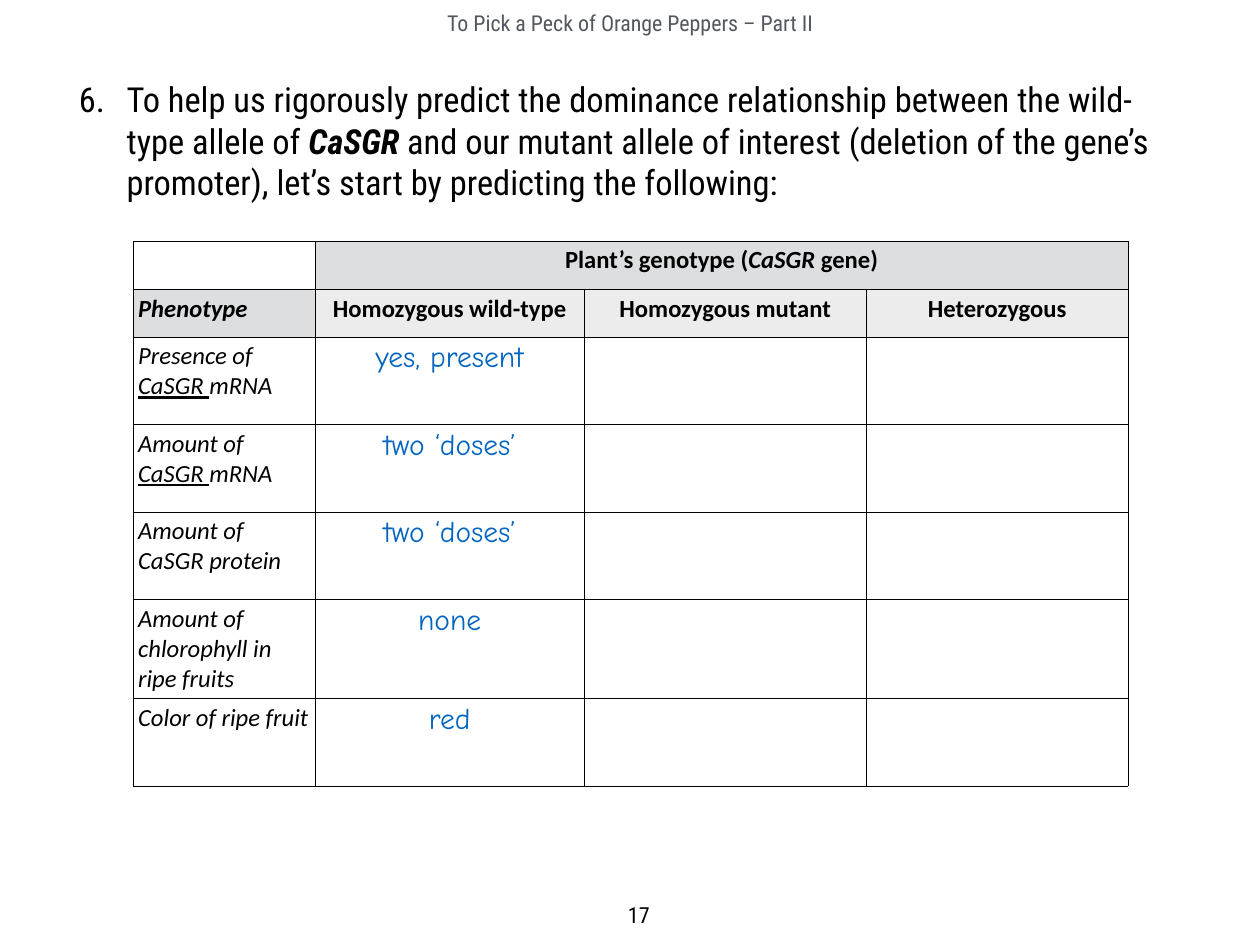
import pptx
import pptx.dml.color
import pptx.enum.text
import pptx.oxml
import pptx.oxml.ns
import pptx.util
from pptx.util import Cm

ALIGN = pptx.enum.text.PP_ALIGN
ANCHOR = pptx.enum.text.MSO_ANCHOR
HEADING_FONT = "Roboto Condensed"
BLACK, WHITE, ANSWER_BLUE = "000000", "FFFFFF", "0365C0"
TITLE_GREY, DARK_FILL, LIGHT_FILL = "53585F", "DCDEE0", "ECECEC"

COLUMN_WIDTHS = [5.23, 7.7, 8.1, 7.49]
ROW_HEIGHTS = [1.4, 1.35, 2.51, 2.51, 2.51, 2.84, 2.51]
QUESTION = [
    ("To help us rigorously predict the dominance relationship between the wild-type allele of ", ""),
    ("CaSGR", "bi"),
    (" and our mutant allele of interest (deletion of the gene’s promoter), "
     "let’s start by predicting the following:", ""),
]
GENOTYPE_TITLE = [("Plant’s genotype (", "b"), ("CaSGR ", "bi"), ("gene)", "b")]
GENOTYPES = ["Homozygous wild-type", "Homozygous mutant", "Heterozygous"]
MRNA = [("CaSGR ", "iu"), ("mRNA", "i")]
PHENOTYPES = [
    ([("Presence of ", "i")] + MRNA, "yes, present"),
    ([("Amount of ", "i")] + MRNA, "two ‘doses’"),
    ([("Amount of CaSGR protein", "i")], "two ‘doses’"),
    ([("Amount of chlorophyll in ripe fruits", "i")], "none"),
    ([("Color of ripe fruit", "i")], "red"),
]


def color(hex_string):
    """Turn a hex string into a colour."""
    return pptx.dml.color.RGBColor.from_string(hex_string)


def add_runs(para, runs, size, font, hex_string):
    """Add (text, style) runs, where style holds any of the letters b, i and u."""
    for text, style in runs:
        span = para.add_run()
        span.text = text
        span.font.size = pptx.util.Pt(size)
        span.font.name = font
        span.font.color.rgb = color(hex_string)
        span.font.bold = "b" in style
        span.font.italic = "i" in style
        span.font.underline = "u" in style


def add_text(page, box, runs, size, hex_string, align, anchor):
    """Place one paragraph in a wrapped text box and return the paragraph."""
    frame = page.shapes.add_textbox(*map(Cm, box)).text_frame
    frame.word_wrap = True
    frame.vertical_anchor = anchor
    frame.margin_left = frame.margin_right = Cm(0.15)
    frame.margin_top = frame.margin_bottom = Cm(0.15)
    para = frame.paragraphs[0]
    para.alignment = align
    add_runs(para, runs, size, HEADING_FONT, hex_string)
    return para


def add_question(page, box, number):
    """Place the numbered question with a hanging indent."""
    para = add_text(page, box, QUESTION, 28, BLACK, ALIGN.LEFT, ANCHOR.MIDDLE)
    para.space_before = pptx.util.Pt(16)
    properties = para._p.get_or_add_pPr()
    properties.set("marL", str(Cm(1.37)))
    properties.set("indent", str(-Cm(1.37)))
    namespace = pptx.oxml.ns.nsdecls("a")
    for markup in (
        f'<a:buClr {namespace}><a:srgbClr val="{BLACK}"/></a:buClr>',
        f'<a:buFont {namespace} typeface="{HEADING_FONT}"/>',
        f'<a:buAutoNum {namespace} type="arabicPeriod" startAt="{number}"/>',
    ):
        properties.append(pptx.oxml.parse_xml(markup))


def style_cell(cell, row, column, fill):
    """Give a cell its margins, borders and fill."""
    last_row, last_column = len(ROW_HEIGHTS) - 1, len(COLUMN_WIDTHS) - 1
    widths = {
        "L": 0.23 if column == 0 else 0.96 if column == 1 and row else 0.5,
        "R": 0.23 if column == last_column else 0.96 if column == 0 and row else 0.5,
        "T": 0.23 if row == 0 else 0.96 if row == 1 and column else 0.5,
        "B": 0.23 if row == last_row else 0.96 if row == 0 and column else 0.5,
    }
    cell.margin_left = cell.margin_right = Cm(0.15)
    cell.margin_top = cell.margin_bottom = Cm(0.13)
    properties = cell._tc.get_or_add_tcPr()
    for side, width in widths.items():
        properties.append(pptx.oxml.parse_xml(
            f'<a:ln{side} {pptx.oxml.ns.nsdecls("a")} w="{pptx.util.Pt(width)}">'
            f'<a:solidFill><a:srgbClr val="{BLACK}"/></a:solidFill></a:ln{side}>'))
    cell.fill.solid()
    cell.fill.fore_color.rgb = color(fill)


def fill_cell(cell, runs, align, size=20, font="Calibri", hex_string=BLACK):
    """Write runs into a table cell."""
    para = cell.text_frame.paragraphs[0]
    para.alignment = align
    add_runs(para, runs, size, font, hex_string)


def add_prediction_table(page, box):
    """Place the table of phenotypes by genotype."""
    table = page.shapes.add_table(
        len(ROW_HEIGHTS), len(COLUMN_WIDTHS), *map(Cm, box)).table
    table.first_row = table.horz_banding = False
    for column, width in zip(table.columns, COLUMN_WIDTHS):
        column.width = Cm(width)
    for row, height in zip(table.rows, ROW_HEIGHTS):
        row.height = Cm(height)

    fills = [[WHITE] + [DARK_FILL] * 3, [DARK_FILL] + [LIGHT_FILL] * 3]
    fills += [[WHITE] * 4 for _ in PHENOTYPES]
    for row, row_fills in enumerate(fills):
        for column, fill in enumerate(row_fills):
            style_cell(table.cell(row, column), row, column, fill)

    table.cell(0, 1).merge(table.cell(0, 3))
    fill_cell(table.cell(0, 1), GENOTYPE_TITLE, ALIGN.CENTER)
    fill_cell(table.cell(1, 0), [("Phenotype", "bi")], ALIGN.LEFT)
    for column, genotype in enumerate(GENOTYPES, 1):
        fill_cell(table.cell(1, column), [(genotype, "b")], ALIGN.CENTER)
    for row, (label, answer) in enumerate(PHENOTYPES, 2):
        fill_cell(table.cell(row, 0), label, ALIGN.LEFT)
        fill_cell(table.cell(row, 1), [(answer, "")], ALIGN.CENTER,
                  24, "Comic Neue", ANSWER_BLUE)


def main():
    """Build the slide and save it."""
    deck = pptx.Presentation()
    deck.slide_width, deck.slide_height = Cm(36.12), Cm(27.1)
    page = deck.slides.add_slide(deck.slide_layouts[6])
    add_text(page, (17.58, 25.7, 1.47, 1.17), [("17", "")], 18, BLACK,
             ALIGN.CENTER, ANCHOR.TOP)
    add_question(page, (2.11, 2.11, 30.99, 3.84), 6)
    add_text(page, (3.53, 0, 29.06, 1.17),
             [("To Pick a Peck of Orange Peppers – Part II", "")], 17.8, TITLE_GREY,
             ALIGN.CENTER, ANCHOR.BOTTOM)
    add_prediction_table(page, (3.81, 6.91, sum(COLUMN_WIDTHS), sum(ROW_HEIGHTS)))
    deck.save("out.pptx")


if __name__ == "__main__":
    main()
